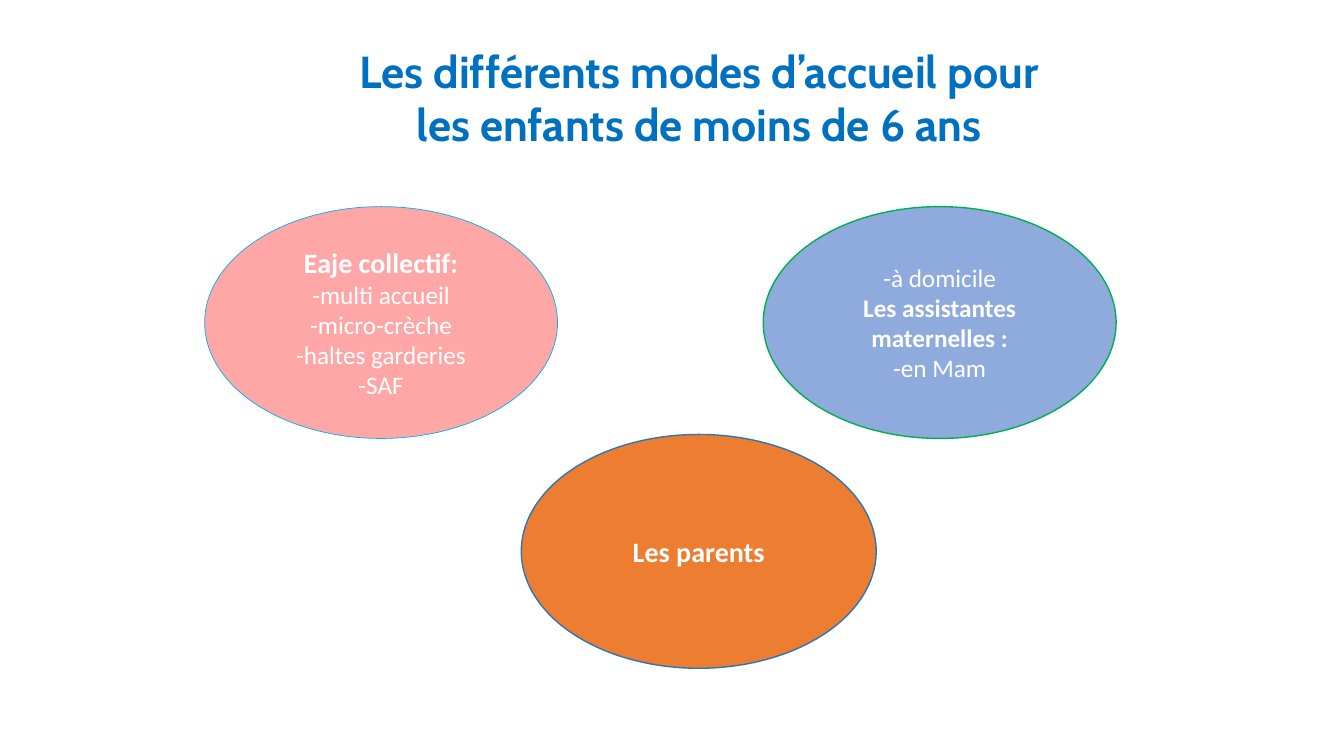
from pptx import Presentation
from pptx.dml.color import RGBColor
from pptx.enum.shapes import MSO_SHAPE
from pptx.enum.text import MSO_ANCHOR, PP_ALIGN
from pptx.util import Inches, Pt

WHITE = RGBColor(0xFF, 0xFF, 0xFF)
TITLE_BLUE = RGBColor(0x00, 0x70, 0xC0)
PINK = RGBColor(0xFF, 0xA7, 0xA7)
SKY = RGBColor(0x00, 0xB0, 0xF0)
PERIWINKLE = RGBColor(0x8F, 0xAA, 0xDC)
GREEN = RGBColor(0x00, 0xB0, 0x50)
ORANGE = RGBColor(0xED, 0x7D, 0x31)
STEEL = RGBColor(0x2E, 0x75, 0xB6)

SLIDE_W, SLIDE_H = 13.33, 7.5
CARE_W, CARE_H = 3.5, 2.3
CARE_TOP = 2.05
PARENTS_W, PARENTS_H = 3.52, 2.32


def write_lines(frame, lines, font_name, color):
    """Fill the frame with centred paragraphs given as (text, size, bold)."""
    frame.word_wrap = True
    frame.text = "\n".join(text for text, _, _ in lines)
    for paragraph, (_, size, bold) in zip(frame.paragraphs, lines):
        paragraph.alignment = PP_ALIGN.CENTER
        for run in paragraph.runs:
            run.font.name = font_name
            run.font.size = Pt(size)
            run.font.bold = bold
            run.font.color.rgb = color


def add_title(slide, text, left, top, width, height):
    title = slide.shapes.add_textbox(
        Inches(left), Inches(top), Inches(width), Inches(height))
    write_lines(title.text_frame, [(text, 32, True)], "Cabin", TITLE_BLUE)


def add_bubble(slide, left, top, width, height, fill, outline, weight, lines):
    bubble = slide.shapes.add_shape(
        MSO_SHAPE.OVAL, Inches(left), Inches(top), Inches(width), Inches(height))
    bubble.shadow.inherit = False
    bubble.fill.solid()
    bubble.fill.fore_color.rgb = fill
    bubble.line.color.rgb = outline
    bubble.line.width = Pt(weight)
    bubble.text_frame.vertical_anchor = MSO_ANCHOR.MIDDLE
    write_lines(bubble.text_frame, lines, "Calibri", WHITE)


def main():
    presentation = Presentation()
    presentation.slide_width = Inches(SLIDE_W)
    presentation.slide_height = Inches(SLIDE_H)
    slide = presentation.slides.add_slide(presentation.slide_layouts[6])

    add_title(
        slide, "Les différents modes d’accueil pour les enfants de moins de 6 ans",
        3.4, 0.38, 7.07, 1.18)
    add_bubble(
        slide, 7.57, CARE_TOP, CARE_W, CARE_H, PERIWINKLE, GREEN, 1,
        [("-à domicile", 18, False),
         ("Les assistantes maternelles :", 18, True),
         ("-en Mam", 18, False)])
    add_bubble(
        slide, 2.03, CARE_TOP, CARE_W, CARE_H, PINK, SKY, 0.5,
        [("Eaje collectif:", 20, True),
         ("-multi accueil", 18, False),
         ("-micro-crèche", 18, False),
         ("-haltes garderies", 18, False),
         ("-SAF", 18, False)])
    add_bubble(
        slide, 5.17, 4.31, PARENTS_W, PARENTS_H, ORANGE, STEEL, 1,
        [("Les parents", 20, True)])

    presentation.save("out.pptx")


if __name__ == "__main__":
    main()
